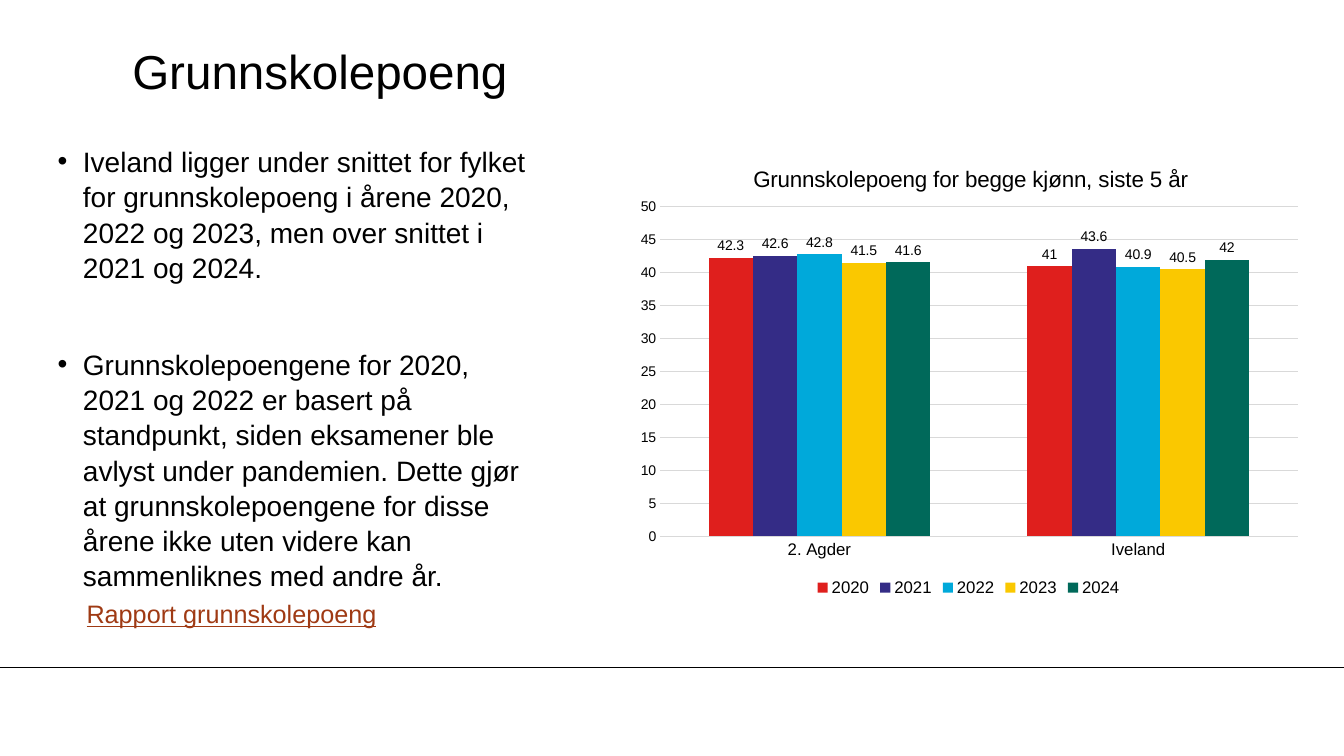
from dataclasses import dataclass

from lxml import etree
from pptx import Presentation
from pptx.chart.data import CategoryChartData
from pptx.dml.color import RGBColor
from pptx.enum.chart import XL_CHART_TYPE as ChartType
from pptx.enum.chart import XL_LABEL_POSITION as LabelPos
from pptx.enum.chart import XL_LEGEND_POSITION as LegendPos
from pptx.enum.chart import XL_TICK_MARK as Tick
from pptx.enum.shapes import MSO_CONNECTOR as Connector
from pptx.enum.text import MSO_ANCHOR as Anchor
from pptx.enum.text import MSO_AUTO_SIZE as AutoSize
from pptx.enum.text import PP_ALIGN as Align
from pptx.oxml import parse_xml
from pptx.oxml.ns import nsdecls, qn
from pptx.util import Emu, Pt

PX = 9525  # 96 px to the inch
FONT = "Arial"
BLACK, GRID, LINK = "000000", "D9D9D9", "9F3A14"


@dataclass(frozen=True)
class Box:
    x: int
    y: int
    w: int
    h: int

    def emu(self) -> tuple[Emu, ...]:
        return tuple(Emu(v * PX) for v in (self.x, self.y, self.w, self.h))


@dataclass(frozen=True)
class Year:
    name: str
    color: str
    values: tuple[float, float]


@dataclass(frozen=True)
class Bullet:
    text: str
    before: int


TITLE_BOX = Box(126, 31, 1066, 72)
BODY_BOX = Box(55, 136, 453, 417)
LINK_BOX = Box(73, 565, 317, 38)
CHART_BOX = Box(596, 136, 653, 436)
RULE_Y = 636

BULLETS = [
    Bullet("Iveland ligger under snittet for fylket for grunnskolepoeng i årene "
           "2020, 2022 og 2023, men over snittet i 2021 og 2024.", 0),
    Bullet("Grunnskolepoengene for 2020, 2021 og 2022 er basert på standpunkt, "
           "siden eksamener ble avlyst under pandemien. Dette gjør at "
           "grunnskolepoengene for disse årene ikke uten videre kan "
           "sammenliknes med andre år.", 44),
]
PLACES = ["2. Agder", "Iveland"]
YEARS = [
    Year("2020", "DF1F1D", (42.3, 41)),
    Year("2021", "342C86", (42.6, 43.6)),
    Year("2022", "00A9DA", (42.8, 40.9)),
    Year("2023", "FAC800", (41.5, 40.5)),
    Year("2024", "00695A", (41.6, 42)),
]


def rgb(color: str) -> RGBColor:
    return RGBColor.from_string(color)


def style(font, size: int, color: str = BLACK) -> None:
    font.name, font.size, font.bold = FONT, Pt(size), False
    font.color.rgb = rgb(color)


def place(s, box: Box) -> None:
    s.left, s.top, s.width, s.height = box.emu()


def no_insets(tf) -> None:
    tf.margin_left = tf.margin_right = tf.margin_top = tf.margin_bottom = 0
    tf.auto_size = AutoSize.NONE
    tf.word_wrap = True


def add_title(slide) -> None:
    s = slide.shapes.title
    place(s, TITLE_BOX)
    tf = s.text_frame
    no_insets(tf)
    tf.vertical_anchor = Anchor.MIDDLE
    tf.text = "Grunnskolepoeng"
    tf.paragraphs[0].alignment = Align.LEFT
    style(tf.paragraphs[0].runs[0].font, 34)


def add_body(slide) -> None:
    s = slide.placeholders[1]
    place(s, BODY_BOX)
    tf = s.text_frame
    no_insets(tf)
    tf.vertical_anchor = Anchor.TOP
    for i, bullet in enumerate(BULLETS):
        p = tf.add_paragraph() if i else tf.paragraphs[0]
        p.text = bullet.text
        p.space_before = Pt(bullet.before)
        p.line_spacing = 1.05
        pPr = p._p.get_or_add_pPr()
        pPr.set("marL", str(24 * PX))
        pPr.set("indent", str(-24 * PX))
        etree.SubElement(pPr, qn("a:buFont")).set("typeface", FONT)
        etree.SubElement(pPr, qn("a:buChar")).set("char", "•")
        style(p.runs[0].font, 20)


def add_report_label(slide) -> None:
    tf = slide.shapes.add_textbox(*LINK_BOX.emu()).text_frame
    tf.word_wrap = True
    tf.text = "Rapport grunnskolepoeng"
    r = tf.paragraphs[0].runs[0]
    style(r.font, 18, LINK)
    r.font.underline = True


def add_rule(slide, width: int) -> None:
    y = Emu(RULE_Y * PX)
    s = slide.shapes.add_connector(Connector.STRAIGHT, 0, y, width, y)
    s.line.color.rgb = rgb(BLACK)
    s.line.width = Pt(0.75)
    etree.SubElement(s._element.spPr, qn("a:effectLst"))


def manual_layout(target: str, **fractions: float):
    """Layout element; fractions are shares of the chart's size."""
    inner = '<c:layoutTarget val="inner"/>' if target == "plot" else ""
    modes = '<c:xMode val="edge"/><c:yMode val="edge"/>'
    sizes = "".join(f'<c:{k} val="{v}"/>' for k, v in fractions.items())
    return parse_xml(f'<c:layout {nsdecls("c")}><c:manualLayout>'
                     f"{inner}{modes}{sizes}</c:manualLayout></c:layout>")


def set_layout(parent, layout, index: int) -> None:
    for old in parent.findall(qn("c:layout")):
        parent.remove(old)
    parent.insert(index, layout)


def add_chart(slide) -> None:
    data = CategoryChartData()
    data.categories = PLACES
    for year in YEARS:
        data.add_series(year.name, year.values)
    chart = slide.shapes.add_chart(
        ChartType.COLUMN_CLUSTERED, *CHART_BOX.emu(), data).chart
    style(chart.font, 10)

    # Title and legend
    chart.has_title = True
    tf = chart.chart_title.text_frame
    tf.text = "Grunnskolepoeng for begge kjønn, siste 5 år"
    style(tf.paragraphs[0].runs[0].font, 16)
    chart.chart_title.include_in_layout = False
    set_layout(chart.chart_title._element, manual_layout("title", x=0.18, y=0.04), 1)
    chart.has_legend = True
    chart.legend.position = LegendPos.BOTTOM
    chart.legend.include_in_layout = False
    style(chart.legend.font, 12)

    # Axes
    cat, val = chart.category_axis, chart.value_axis
    for axis, size in ((cat, 12), (val, 10)):
        axis.major_tick_mark = axis.minor_tick_mark = Tick.NONE
        style(axis.tick_labels.font, size)
    val.minimum_scale, val.maximum_scale, val.major_unit = 0, 50, 5
    val.format.line.fill.background()
    for line in (cat.format.line, val.major_gridlines.format.line):
        line.color.rgb = rgb(GRID)
        line.width = Pt(0.75)

    # Columns
    plot = chart.plots[0]
    plot.gap_width, plot.overlap, plot.vary_by_categories = 219, 0, False
    for series, year in zip(plot.series, YEARS):
        series.format.fill.solid()
        series.format.fill.fore_color.rgb = rgb(year.color)
        labels = series.data_labels
        labels.show_value = True
        labels.position = LabelPos.OUTSIDE_END
        style(labels.font, 10)
    area = chart._chartSpace.chart.plotArea
    set_layout(area, manual_layout("plot", x=0.05, y=0.14, w=0.93, h=0.72), 0)


def main() -> None:
    prs = Presentation()
    prs.slide_width, prs.slide_height = Emu(1280 * PX), Emu(720 * PX)
    slide = prs.slides.add_slide(prs.slide_layouts[1])
    add_rule(slide, prs.slide_width)
    add_title(slide)
    add_body(slide)
    add_report_label(slide)
    add_chart(slide)
    prs.save("out.pptx")


if __name__ == "__main__":
    main()
